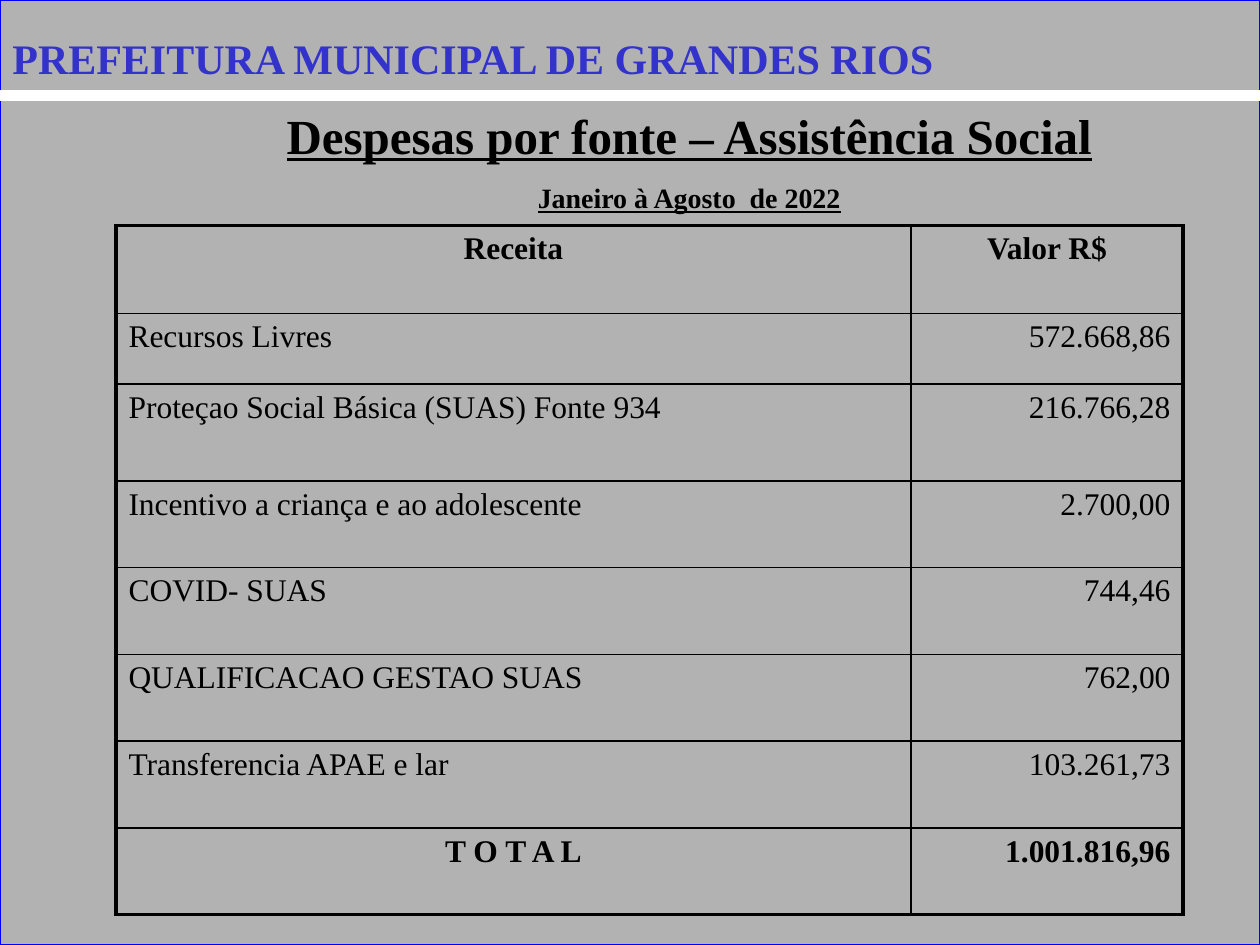
from lxml import etree
from pptx import Presentation, util as u
from pptx.dml.color import RGBColor
from pptx.enum import shapes, text
from pptx.oxml.ns import qn

FONT = "Times New Roman"
BLACK = "000000"
LEFT, CENTER, RIGHT = text.PP_ALIGN.LEFT, text.PP_ALIGN.CENTER, text.PP_ALIGN.RIGHT
ROWS = [
    ("Receita", "Valor R$"),
    ("Recursos Livres", "572.668,86"),
    ("Proteçao Social Básica (SUAS) Fonte 934", "216.766,28"),
    ("Incentivo a criança e ao adolescente", "2.700,00"),
    ("COVID- SUAS", "744,46"),
    ("QUALIFICACAO GESTAO SUAS", "762,00"),
    ("Transferencia APAE e lar", "103.261,73"),
    ("T O T A L", "1.001.816,96"),
]
ROW_SHARES = [0.7, 0.56, 0.77] + [0.69] * 5
COL_SHARES = [6.31, 2.16]


def color(value):
    return RGBColor.from_string(value)


def inches(box):
    return [u.Inches(v) for v in box]


def add_run(p, words, size, hex_color=BLACK, bold=False, underline=False):
    r = p.add_run()
    r.text = words
    r.font.name = FONT
    r.font.size = u.Pt(size)
    r.font.bold = bold
    r.font.underline = underline
    r.font.color.rgb = color(hex_color)
    return r


def add_backdrop(s, box):
    sp = s.shapes.add_shape(shapes.MSO_SHAPE.RECTANGLE, *inches(box))
    sp.shadow.inherit = False
    sp.fill.solid()
    sp.fill.fore_color.rgb = color("B2B2B2")
    sp.line.color.rgb = color("0000FF")
    sp.line.width = u.Pt(0.75)


def add_rule(s, box):
    left, top, width, height = box
    line = s.shapes.add_connector(
        shapes.MSO_CONNECTOR.STRAIGHT, *inches((left, top, left + width, top + height)))
    line.line.color.rgb = color("FFFFFF")
    line.line.width = u.Pt(6)
    etree.SubElement(line._element.spPr, qn("a:effectLst"))


def place_title(s, box):
    title = s.shapes.title
    s.shapes._spTree.append(title._element)
    title.left, title.top, title.width, title.height = inches(box)
    tf = title.text_frame
    tf.word_wrap = True
    tf.auto_size = text.MSO_AUTO_SIZE.NONE
    tf.vertical_anchor = text.MSO_ANCHOR.TOP
    lines = [("Despesas por fonte – Assistência Social", 28),
             ("Janeiro à Agosto  de 2022", 16)]
    for i, (words, size) in enumerate(lines):
        p = tf.add_paragraph() if i else tf.paragraphs[0]
        p.alignment = CENTER
        p.line_spacing = 1.5
        p.space_before = u.Pt(0)
        add_run(p, words, size, bold=True, underline=True)


def add_header(s, box):
    tf = s.shapes.add_textbox(*inches(box)).text_frame
    tf.word_wrap = True
    r = add_run(tf.paragraphs[0], "PREFEITURA MUNICIPAL DE GRANDES RIOS", 24, "3333CC", True)
    effects = etree.Element(qn("a:effectLst"))
    shadow = etree.SubElement(effects, qn("a:outerShdw"), dist="35921", dir="2700000")
    etree.SubElement(shadow, qn("a:srgbClr"), val="808080")
    r.font._element.find(qn("a:solidFill")).addnext(effects)


def set_borders(cell, outer):
    tc_pr = cell._tc.get_or_add_tcPr()
    for side in "LRTB":
        width = u.Pt(2.25 if side in outer else 1)
        line = etree.SubElement(tc_pr, qn(f"a:ln{side}"), w=str(width))
        fill = etree.SubElement(line, qn("a:solidFill"))
        etree.SubElement(fill, qn("a:srgbClr"), val=BLACK)


def add_expenses(s, box):
    last = len(ROWS) - 1
    table = s.shapes.add_table(len(ROWS), 2, *inches(box)).table
    table.first_row = table.horz_banding = False
    for col, share in zip(table.columns, COL_SHARES):
        col.width = u.Inches(box[2] * share / sum(COL_SHARES))
    for row, share in zip(table.rows, ROW_SHARES):
        row.height = u.Inches(box[3] * share / sum(ROW_SHARES))
    for i, row in enumerate(ROWS):
        for j, words in enumerate(row):
            cell = table.cell(i, j)
            set_borders(cell, "LR"[j] + "T" * (i == 0) + "B" * (i == last))
            cell.fill.background()
            p = cell.text_frame.paragraphs[0]
            centered = i == 0 or (i == last and j == 0)
            p.alignment = CENTER if centered else (LEFT, RIGHT)[j]
            add_run(p, words, 18, bold=i in (0, last))


def main():
    prs = Presentation()
    prs.slide_width, prs.slide_height = inches((10, 7.5))
    s = prs.slides.add_slide(prs.slide_layouts[5])
    add_backdrop(s, (0, 0, 10, 7.5))
    add_rule(s, (0, 0.76, 10, 0))
    place_title(s, (1.43, 0.55, 8.08, 5.81))
    add_header(s, (0, 0.21, 9.49, 0.5))
    add_expenses(s, (0.92, 1.79, 8.47, 5.47))
    prs.save("out.pptx")


if __name__ == "__main__":
    main()
